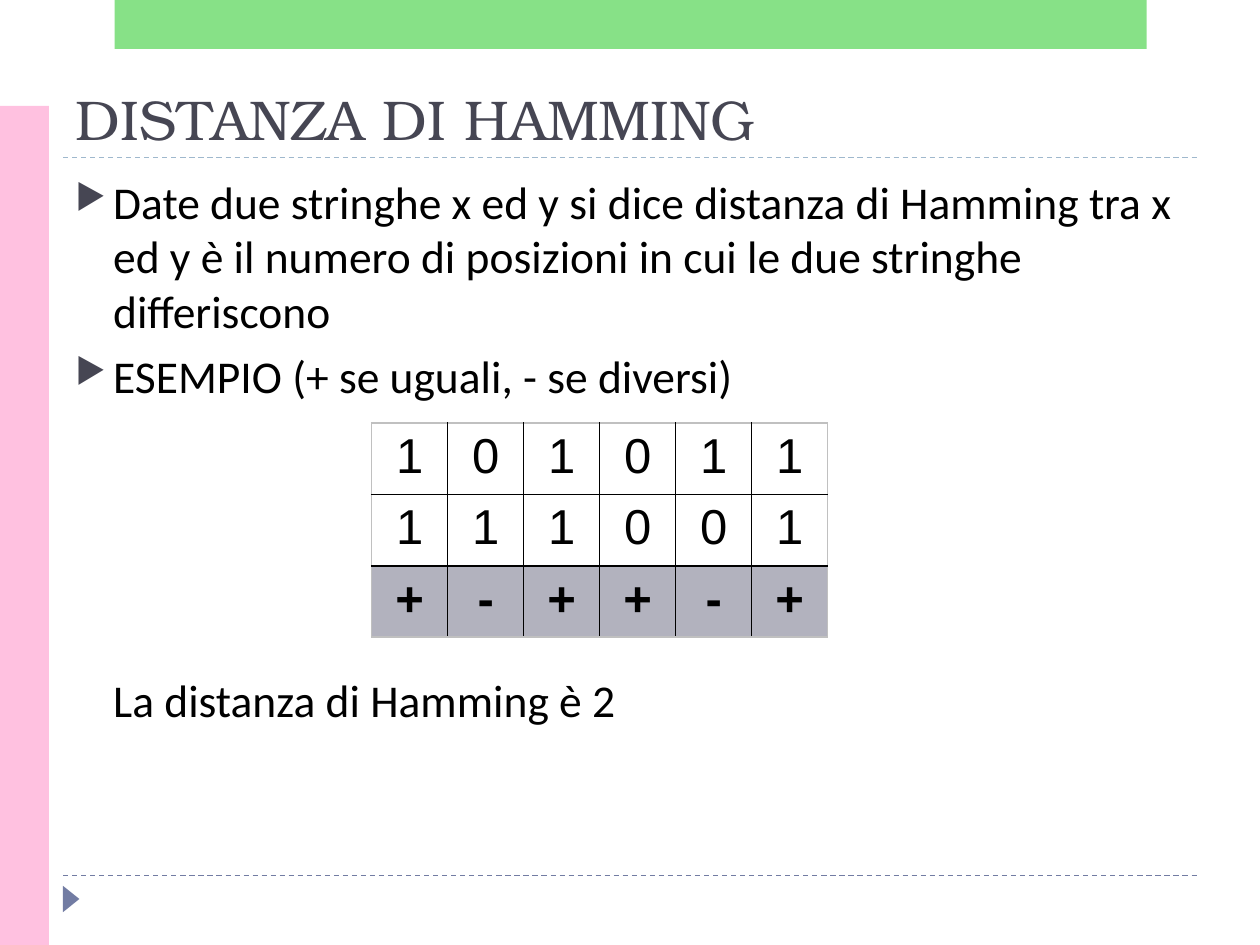
from dataclasses import dataclass
from typing import NamedTuple

from lxml.etree import SubElement
from pptx import Presentation
from pptx.dml.color import RGBColor
from pptx.enum.dml import MSO_LINE
from pptx.enum.shapes import MSO_CONNECTOR, MSO_SHAPE
from pptx.enum.text import MSO_ANCHOR, PP_ALIGN
from pptx.oxml.ns import qn
from pptx.util import Pt


@dataclass(frozen=True)
class Theme:
    ink: str = "000000"
    title: str = "464653"
    accent: str = "727CA3"
    rule: str = "9FB8CD"
    pink: str = "FFC1E0"
    green: str = "62D862"
    result: str = "B2B2BE"
    paper: str = "FFFFFF"
    edge: str = "C0C0C0"
    head: str = "TeX Gyre Bonum"
    body: str = "Calibri"
    grid: str = "Arial"
    head_size: float = 32
    body_size: float = 26
    grid_size: float = 28


class Block(NamedTuple):
    kind: MSO_SHAPE
    box: tuple
    color: str
    turn: float = 0
    alpha: int = 100


class Rule(NamedTuple):
    top: float
    color: str


class Para(NamedTuple):
    text: str
    before: float = 0
    bullet: bool = False


T = Theme()
LEFT, WIDTH = 36, 648
INDENT = 21.6

RULES = [Rule(500.4, T.accent), Rule(90, T.rule)]
BLOCKS = [
    Block(MSO_SHAPE.ISOSCELES_TRIANGLE, (33.1, 509, 15.1, 9.4), T.accent, turn=90),
    Block(MSO_SHAPE.RECTANGLE, (0, 60.5, 28, 479.5), T.pink),
    Block(MSO_SHAPE.RECTANGLE, (65.5, 0, 589.7, 28), T.green, alpha=76),
]
PARAS = [
    Para("Date due stringhe x ed y si dice distanza di Hamming tra x ed y "
         "è il numero di posizioni in cui le due stringhe differiscono", bullet=True),
    Para("ESEMPIO (+ se uguali, - se diversi)", 6, True),
    Para("La distanza di Hamming è 2", 154),
]
FIRST, SECOND = "101011", "111001"
SIGNS = "".join("+" if a == b else "-" for a, b in zip(FIRST, SECOND))


def rgb(code: str) -> RGBColor:
    return RGBColor.from_string(code)


def style(font, name: str, size: float, color: str, bold: bool = False) -> None:
    font.name, font.size, font.bold = name, Pt(size), bold
    font.color.rgb = rgb(color)


def draw_rule(slide, rule: Rule) -> None:
    line = slide.shapes.add_connector(
        MSO_CONNECTOR.STRAIGHT, Pt(LEFT), Pt(rule.top), Pt(LEFT + WIDTH), Pt(rule.top))
    line.line.color.rgb = rgb(rule.color)
    line.line.width = Pt(0.75)
    line.line.dash_style = MSO_LINE.DASH
    SubElement(line._element.spPr, qn("a:effectLst"))


def draw_block(slide, block: Block) -> None:
    shape = slide.shapes.add_shape(block.kind, *map(Pt, block.box))
    shape.rotation = block.turn
    shape.shadow.inherit = False
    shape.line.fill.background()
    shape.fill.solid()
    shape.fill.fore_color.rgb = rgb(block.color)
    if block.alpha < 100:
        color = shape._element.spPr.find(".//" + qn("a:srgbClr"))
        SubElement(color, qn("a:alpha"), val=str(block.alpha * 1000))


def add_frame(slide, top: float, height: float, anchor: MSO_ANCHOR):
    frame = slide.shapes.add_textbox(Pt(LEFT), Pt(top), Pt(WIDTH), Pt(height)).text_frame
    frame.word_wrap = True
    frame.vertical_anchor = anchor
    return frame


def add_bullet(props) -> None:
    color = SubElement(props, qn("a:buClr"))
    SubElement(color, qn("a:srgbClr"), val=T.title)
    SubElement(props, qn("a:buSzPct"), val="76000")
    SubElement(props, qn("a:buChar"), char="▶")


def draw_body(slide) -> None:
    frame = add_frame(slide, 95.8, 388.8, MSO_ANCHOR.TOP)
    for i, item in enumerate(PARAS):
        para = frame.add_paragraph() if i else frame.paragraphs[0]
        para.text = item.text
        props = para._p.get_or_add_pPr()
        props.set("marL", str(Pt(INDENT)))
        props.set("indent", str(Pt(-INDENT if item.bullet else 0)))
        if item.bullet:
            add_bullet(props)
        para.space_before = Pt(item.before)
        style(para.font, T.body, T.body_size, T.ink)


def add_edge(cell, side: str, color: str) -> None:
    edge = SubElement(cell._tc.get_or_add_tcPr(), qn("a:" + side), w=str(Pt(1)))
    fill = SubElement(edge, qn("a:solidFill"))
    SubElement(fill, qn("a:srgbClr"), val=color)


def draw_grid(slide) -> None:
    rows = [FIRST, SECOND, SIGNS]
    last, end = len(rows) - 1, len(FIRST) - 1
    wide, high = 43.45, 38.4
    table = slide.shapes.add_table(
        len(rows), len(FIRST), Pt(212.4), Pt(241.6),
        Pt(wide * len(FIRST)), Pt(high * len(rows))).table
    table.first_row = table.horz_banding = False
    for col in table.columns:
        col.width = Pt(wide)
    for r, row in enumerate(rows):
        table.rows[r].height = Pt(high)
        for c, sign in enumerate(row):
            cell = table.cell(r, c)
            outer = {"lnL": c == 0, "lnR": c == end, "lnT": r == 0, "lnB": r == last}
            for side, out in outer.items():
                add_edge(cell, side, T.edge if out else T.ink)
            cell.fill.solid()
            cell.fill.fore_color.rgb = rgb(T.result if r == last else T.paper)
            para = cell.text_frame.paragraphs[0]
            para.text = sign
            para.alignment = PP_ALIGN.CENTER
            style(para.font, T.grid, T.grid_size, T.ink, r == last)


def main() -> None:
    deck = Presentation()
    deck.slide_width, deck.slide_height = Pt(720), Pt(540)
    slide = deck.slides.add_slide(deck.slide_layouts[6])
    for rule in RULES:
        draw_rule(slide, rule)
    for block in BLOCKS:
        draw_block(slide, block)
    title = add_frame(slide, 39.6, 50.4, MSO_ANCHOR.BOTTOM).paragraphs[0]
    title.text = "DISTANZA DI HAMMING"
    style(title.font, T.head, T.head_size, T.title)
    draw_body(slide)
    draw_grid(slide)
    deck.save("out.pptx")


if __name__ == "__main__":
    main()
